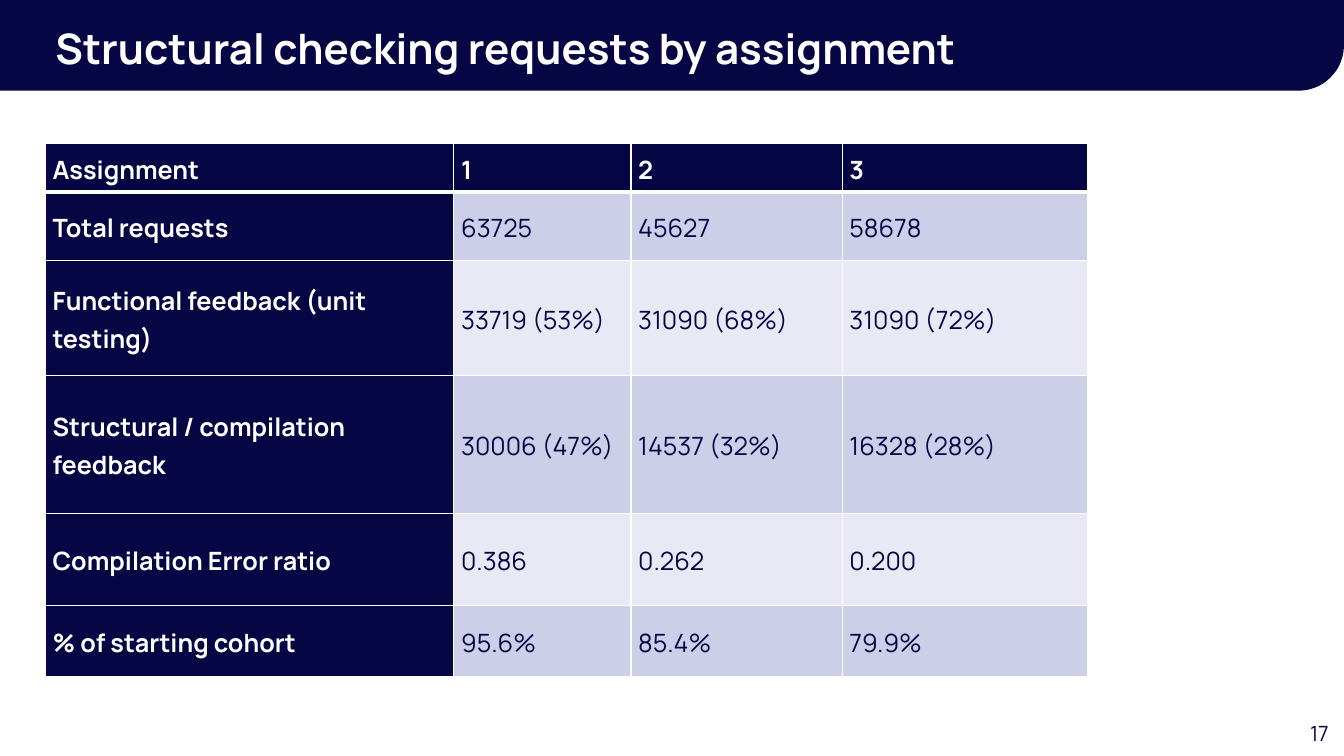
"""Build the slide on structural checking requests by assignment."""
from lxml.etree import SubElement
from pptx import Presentation
from pptx.dml.color import RGBColor
from pptx.enum.shapes import MSO_SHAPE as Shape
from pptx.enum.text import MSO_ANCHOR as Anchor, PP_ALIGN as Align
from pptx.oxml.ns import qn
from pptx.util import Pt

TITLE = "Structural checking requests by assignment"
PAGE_NUMBER = "17"
ROWS = [
    ("Assignment", "1", "2", "3"),
    ("Total requests", "63725", "45627", "58678"),
    ("Functional feedback (unit testing)", "33719 (53%)", "31090 (68%)", "31090 (72%)"),
    ("Structural / compilation feedback", "30006 (47%)", "14537 (32%)", "16328 (28%)"),
    ("Compilation Error ratio", "0.386", "0.262", "0.200"),
    ("% of starting cohort", "95.6%", "85.4%", "79.9%"),
]
COLUMN_WIDTHS = [291.8, 126.5, 150.9, 175.3]
ROW_HEIGHTS = [34.6, 49, 82, 98.6, 65.5, 51]
COLORS = {"navy": "060645", "white": "FFFFFF", "lilac": "CDCFE8", "pale": "E8E9F4"}
FONT = "Manrope"


def paint(fill, color):
    fill.solid()
    fill.fore_color.rgb = RGBColor.from_string(COLORS[color])


def write(frame, text, size, color, bold=False, align=Align.LEFT, spacing=None):
    para = frame.paragraphs[0]
    para.alignment = align
    para.line_spacing = spacing
    span = para.add_run()
    span.text = text
    span.font.name = FONT
    span.font.size = Pt(size)
    span.font.bold = bold
    span.font.color.rgb = RGBColor.from_string(COLORS[color])
    return para


def add_border(cell, side, width):
    line = SubElement(cell._tc.get_or_add_tcPr(), qn(f"a:ln{side}"), w=str(Pt(width)))
    SubElement(SubElement(line, qn("a:solidFill")), qn("a:srgbClr"), val=COLORS["white"])


def add_banner(page):
    banner = page.shapes.add_shape(Shape.ROUND_1_RECTANGLE, Pt(-0.5), 0, Pt(960.5), Pt(64.8))
    banner.adjustments[0] = 0.5
    banner._element.spPr.xfrm.set("flipV", "1")
    banner.shadow.inherit = False
    paint(banner.fill, "navy")
    banner.line.fill.background()
    page.shapes._spTree.insert(2, banner._element)


def add_title(page):
    title = page.shapes.title
    title.left, title.top, title.width, title.height = Pt(32.4), Pt(13), Pt(847.4), Pt(38.9)
    title.text_frame.vertical_anchor = Anchor.MIDDLE
    para = write(title.text_frame, TITLE, 30, "white", bold=True, spacing=1.1)
    para.space_before = Pt(10)


def add_page_number(page):
    box = page.shapes.add_textbox(Pt(906.5), Pt(511.2), Pt(49.7), Pt(25.2))
    box.text_frame.word_wrap = True
    write(box.text_frame, PAGE_NUMBER, 15, "navy", align=Align.RIGHT)


def add_requests_table(page):
    frame = page.shapes.add_table(len(ROWS), len(COLUMN_WIDTHS), Pt(32.4), Pt(102.6),
                                  Pt(sum(COLUMN_WIDTHS)), Pt(sum(ROW_HEIGHTS)))
    table = frame.table
    for column, width in zip(table.columns, COLUMN_WIDTHS):
        column.width = Pt(width)
    for row, height in zip(table.rows, ROW_HEIGHTS):
        row.height = Pt(height)
    for r, texts in enumerate(ROWS):
        for c, text in enumerate(texts):
            cell = table.cell(r, c)
            heading = r == 0 or c == 0
            cell.vertical_anchor = Anchor.MIDDLE
            cell.margin_left = cell.margin_right = Pt(5.2)
            cell.margin_top = cell.margin_bottom = 0
            widths = {"L": 1, "R": 1, "T": 3 if r == 1 else 1, "B": 3 if r == 0 else 1}
            for side, width in widths.items():
                add_border(cell, side, width)
            paint(cell.fill, "navy" if heading else "lilac" if r % 2 else "pale")
            write(cell.text_frame, text, 18, "white" if heading else "navy", heading,
                  Align.JUSTIFY if c else Align.LEFT, 1.1)


def main():
    deck = Presentation()
    deck.slide_width, deck.slide_height = Pt(960), Pt(540)
    page = deck.slides.add_slide(deck.slide_layouts[5])
    add_banner(page)
    add_title(page)
    add_requests_table(page)
    add_page_number(page)
    deck.save("out.pptx")


if __name__ == "__main__":
    main()
